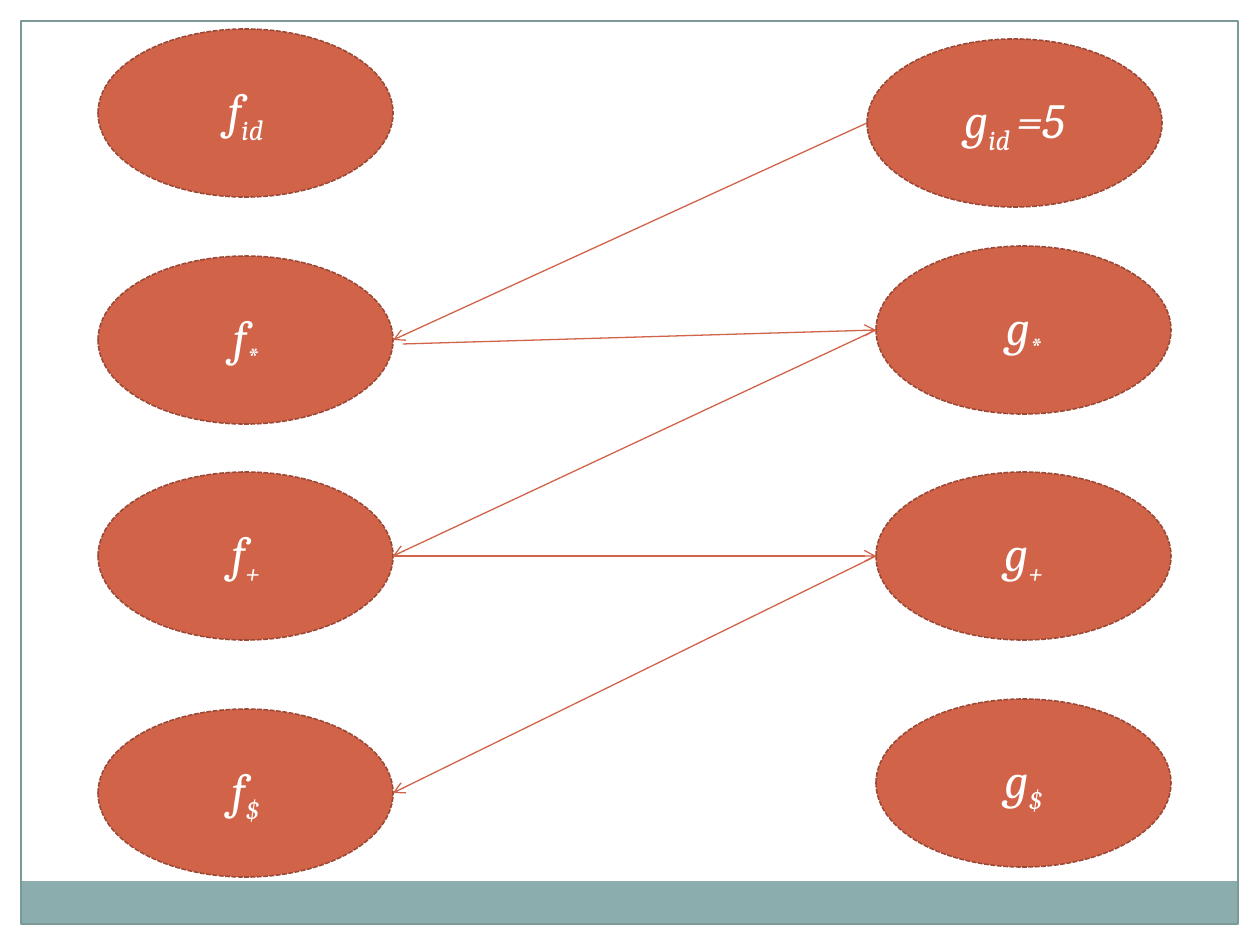
from pptx import Presentation
from pptx.dml.color import RGBColor
from pptx.enum.dml import MSO_LINE
from pptx.enum.shapes import MSO_CONNECTOR, MSO_SHAPE
from pptx.enum.text import MSO_ANCHOR, PP_ALIGN
from pptx.util import Pt
from lxml.etree import SubElement
from pptx.oxml.ns import qn

SCALE = 914400 / 126  # EMU per px
ORANGE = "D16349"


def px(*lengths):
    return [round(length * SCALE) for length in lengths]


def color(hex_string):
    return RGBColor.from_string(hex_string)


presentation = Presentation()
presentation.slide_width, presentation.slide_height = px(1260, 945)
slide = presentation.slides.add_slide(presentation.slide_layouts[6])
shapes = slide.shapes

# Footer band and page frame
band = shapes.add_shape(MSO_SHAPE.RECTANGLE, *px(21, 881, 1217, 43))
band.shadow.inherit = False
band.fill.solid()
band.fill.fore_color.rgb = color("8CADAE")
band.line.fill.background()

frame = shapes.add_shape(MSO_SHAPE.RECTANGLE, *px(21, 21, 1217, 903))
frame.shadow.inherit = False
frame.fill.background()
frame.line.color.rgb = color("7C999A")
frame.line.width = Pt(0.75)

# Function nodes: left, top, letter, subscript, text after it
WIDTH, HEIGHT = 295, 168
nodes = {
    "f_id": (98, 29, "f", "id", ""),
    "f_star": (98, 256, "f", "*", ""),
    "f_plus": (98, 472, "f", "+", ""),
    "f_dollar": (98, 709, "f", "$", ""),
    "g_id": (867, 39, "g", "id ", "=5"),
    "g_star": (876, 246, "g", "*", ""),
    "g_plus": (876, 472, "g", "+", ""),
    "g_dollar": (876, 699, "g", "$", ""),
}
for left, top, letter, subscript, ending in nodes.values():
    ellipse = shapes.add_shape(MSO_SHAPE.OVAL, *px(left, top, WIDTH, HEIGHT))
    ellipse.shadow.inherit = False
    ellipse.fill.solid()
    ellipse.fill.fore_color.rgb = color(ORANGE)
    ellipse.line.color.rgb = color("9B4936")
    ellipse.line.width = Pt(0.9)
    ellipse.line.dash_style = MSO_LINE.SQUARE_DOT  # sysDot, refined below
    ellipse.line._ln.find(qn("a:prstDash")).set("val", "sysDash")

    ellipse.text_frame.vertical_anchor = MSO_ANCHOR.MIDDLE
    paragraph = ellipse.text_frame.paragraphs[0]
    paragraph.alignment = PP_ALIGN.CENTER
    for text, baseline in ((letter, 0), (subscript, -25000), (ending, 0)):
        if not text:
            continue
        run = paragraph.add_run()
        run.text = text
        run.font.name = "Cambria"
        run.font.size = Pt(28)
        run.font.italic = True
        run.font.color.rgb = color("FFFFFF")
        if baseline:
            run.font._element.set("baseline", str(baseline))

# Arrows between the facing sides of the nodes; one starts slightly off its node
arrows = [
    ("g_id", "f_star", 0, 0),
    ("g_star", "f_plus", 0, 0),
    ("f_plus", "g_plus", 0, 0),
    ("g_plus", "f_dollar", 0, 0),
    ("f_star", "g_star", 10, 4),
]
for start, end, shift_x, shift_y in arrows:
    points = []
    for name in (start, end):
        left, top = nodes[name][:2]
        side = left + WIDTH if name.startswith("f") else left
        points += [side, top + HEIGHT // 2]
    points[0] += shift_x
    points[1] += shift_y
    arrow = shapes.add_connector(MSO_CONNECTOR.STRAIGHT, *px(*points))
    arrow.line.color.rgb = color(ORANGE)
    arrow.line.width = Pt(0.75)
    SubElement(arrow.line._ln, qn("a:tailEnd"), type="arrow")
    SubElement(arrow._element.spPr, qn("a:effectLst"))

presentation.save("out.pptx")
